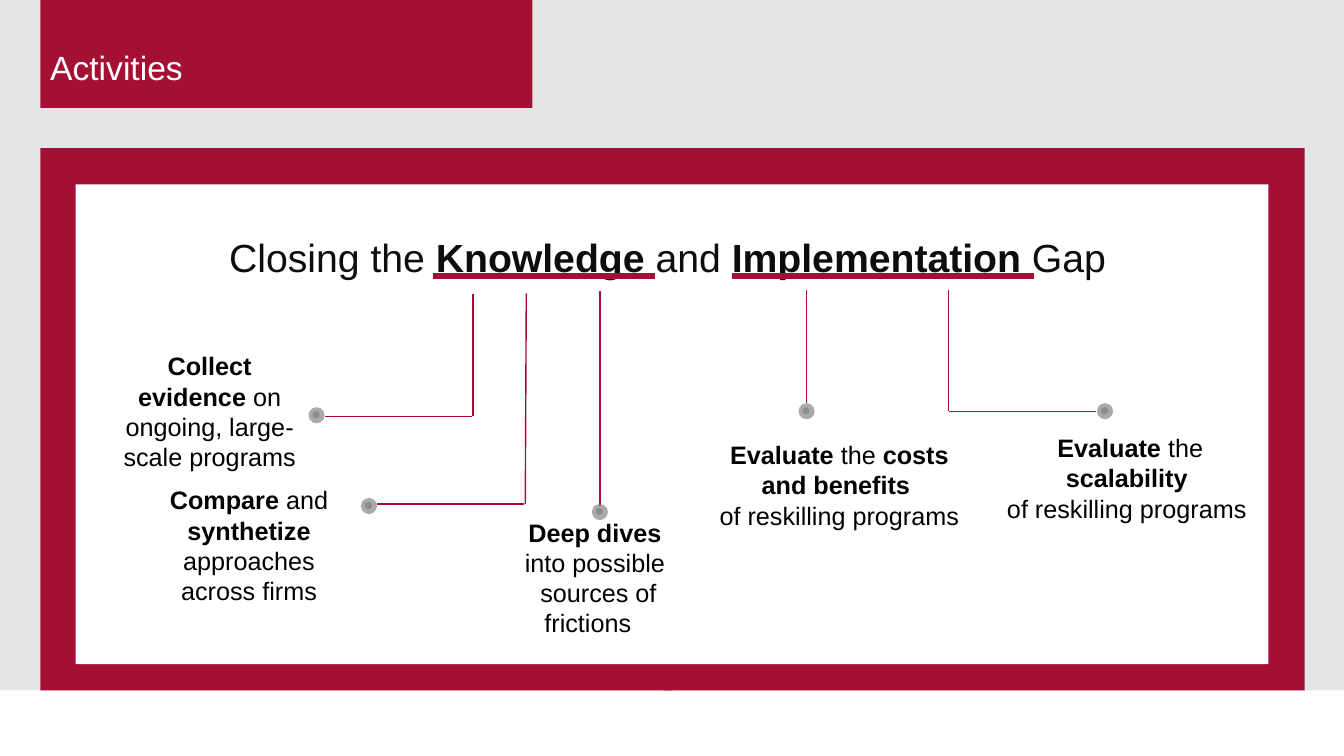
from lxml.etree import SubElement
from pptx import Presentation
from pptx.dml.color import RGBColor
from pptx.enum.shapes import MSO_CONNECTOR, MSO_SHAPE
from pptx.enum.text import MSO_AUTO_SIZE, PP_ALIGN
from pptx.oxml.ns import qn
from pptx.util import Pt

SCALE = 9144
RED, GREY, PALE, WHITE = "A41034", "7F7F7F", "E7E6E6", "FFFFFF"
BLACK, DARK = "000000", "0D0D0D"


def px(size):
    """Turn px, at 100 to the inch, into EMU."""
    return size * SCALE


def tint(code):
    """Turn a hex string into a colour."""
    return RGBColor.from_string(code)


def write(line, text, font="Arial", size=18, bold=False, hue=BLACK):
    """Add one run of text with its format."""
    run = line.add_run()
    run.text = text
    run.font.name = font
    run.font.size = Pt(size)
    run.font.bold = bold
    run.font.color.rgb = tint(hue)


class Sheet:
    """Hold the style and the current slide."""

    def __init__(self, deck, font="Arial"):
        """Add a blank slide to the deck."""
        self.font = font
        self.shapes = deck.slides.add_slide(deck.slide_layouts[6]).shapes

    def shape(self, kind, left, top, wide, high, hue, home=None):
        """Draw a plain filled shape."""
        item = (home or self.shapes).add_shape(kind, px(left), px(top), px(wide), px(high))
        item.shadow.inherit = False
        item.fill.solid()
        item.fill.fore_color.rgb = tint(hue)
        item.line.fill.background()
        return item

    def block(self, left, top, wide, high, hue):
        """Draw a filled rectangle."""
        self.shape(MSO_SHAPE.RECTANGLE, left, top, wide, high, hue)

    def dot(self, left, top):
        """Draw a small disc inside a larger one, both see-through."""
        group = self.shapes.add_group_shape().shapes
        for inset, size in ((0, 16), (4, 7)):
            disc = self.shape(MSO_SHAPE.OVAL, left + inset, top + inset, size, size, GREY, group)
            fill = disc._element.spPr.find(qn("a:solidFill"))
            SubElement(fill[0], qn("a:alpha"), val="66000")

    def line(self, x1, y1, x2, y2, width=1):
        """Draw a straight red line."""
        item = self.shapes.add_connector(MSO_CONNECTOR.STRAIGHT, px(x1), px(y1), px(x2), px(y2))
        item.line.color.rgb = tint(RED)
        item.line.width = Pt(width)
        SubElement(item._element.spPr, qn("a:effectLst"))

    def text(self, left, top, wide, high, lines, align=PP_ALIGN.CENTER, space=None, **style):
        """Place lines, each an indent and runs that are plain and bold in turn."""
        box = self.shapes.add_textbox(px(left), px(top), px(wide), px(high))
        frame = box.text_frame
        frame.word_wrap = True
        frame.auto_size = MSO_AUTO_SIZE.SHAPE_TO_FIT_TEXT
        for count, (indent, *runs) in enumerate(lines):
            line = frame.add_paragraph() if count else frame.paragraphs[0]
            if indent:
                line._p.get_or_add_pPr().set("marL", str(px(indent)))
            line.alignment = align
            line.line_spacing = space
            for place, words in enumerate(runs):
                if words:
                    write(line, words, self.font, bold=place % 2 == 1, **style)


def main():
    """Build the slide and save it."""
    deck = Presentation()
    deck.slide_width, deck.slide_height = px(1333), px(750)
    sheet = Sheet(deck)

    for block in (
        (0, 0, 1333, 685, PALE),
        (658, 147, 636, 538, RED),
        (40, 147, 627, 538, RED),
        (40, 0, 488, 107, RED),
        (75, 183, 1183, 476, WHITE),
    ):
        sheet.block(*block)

    sheet.text(40, 42, 500, 50, [(0, "Activities")], PP_ALIGN.LEFT, size=24, hue=WHITE)
    title = (0, "Closing the ", "Knowledge", " and ", "Implementation", " Gap ")
    sheet.text(1, 195, 1333, 80, [title], space=1.68, size=28, hue=DARK)

    notes = (
        (50, 343, 266, [(50, "", "Collect evidence", " on ongoing, large-scale programs")]),
        (83, 476, 278, [(50, "", "Compare", " and ", "synthetize", " approaches across firms")]),
        (369, 508, 428, [(21, "", "Deep dives "), (21, "into possible "),
                         (21, "sources of"), (0, "frictions")]),
        (643, 431, 329, [(50, "", "Evaluate ", "the", " costs and benefits "),
                         (50, "of reskilling programs")]),
        (984, 424, 274, [(0, "", "Evaluate ", "the", " scalability "),
                         (0, "of reskilling programs ")]),
    )
    for left, top, wide, lines in notes:
        sheet.text(left, top, wide, 131, lines)

    for start, end in ((429, 650), (726, 1026)):
        sheet.line(start, 274, end, 274, 4)

    pins = (
        (306, 404, (469, 292, 469, 413), (468, 413, 322, 413)),
        (358, 494, (522, 291, 521, 500), (520, 500, 374, 500)),
        (587, 500, (595, 289, 595, 502)),
        (792, 400, (800, 288, 800, 400)),
        (1088, 400, (941, 288, 941, 408), (1087, 408, 941, 408)),
    )
    for left, top, *lines in pins:
        for line in lines:
            sheet.line(*line)
        sheet.dot(left, top)

    deck.save("out.pptx")


if __name__ == "__main__":
    main()
